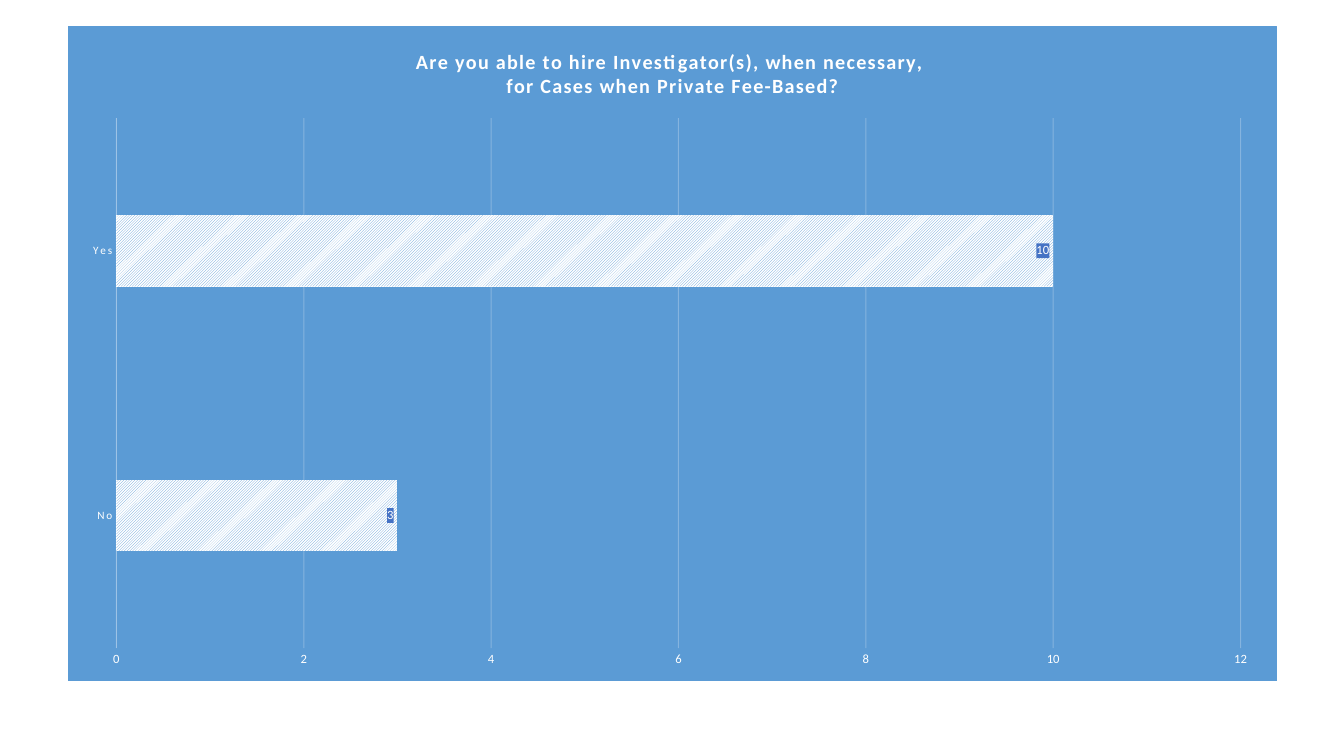
from lxml.etree import fromstring
from pptx import Presentation
from pptx.chart.data import CategoryChartData
from pptx.dml.color import RGBColor
from pptx.enum.chart import XL_CHART_TYPE, XL_LABEL_POSITION, XL_TICK_MARK
from pptx.enum.dml import MSO_PATTERN
from pptx.oxml.ns import nsdecls
from pptx.util import Inches, Pt


def tint(text):
    return RGBColor.from_string(text)


def apply(item, style):
    for key, value in style.items():
        setattr(item, key, value)


class Deck:
    """Draw styled chart parts on the current slide."""

    blue, white, label, edge = "5B9BD5", "FFFFFF", "4472C4", "9DC3E6"
    face = "Calibri"

    def __init__(self, slide):
        self.slide = slide

    def font(self, font, size, bold=False, space=0):
        apply(font, {"name": self.face, "size": Pt(size), "bold": bold})
        font.color.rgb = tint(self.white)
        if space:
            font._rPr.set("spc", str(space))

    def line(self, line, color, width):
        line.color.rgb = tint(color)
        line.width = Pt(width)

    def solid(self, color, line=""):
        return fromstring(
            f'<c:spPr {nsdecls("c", "a")}><a:solidFill><a:srgbClr val="{color}"/>'
            f'</a:solidFill>{line}</c:spPr>')

    def place(self, x, y, wide=None, high=None, inner=False):
        parts = {"xMode": "edge", "yMode": "edge", "x": x, "y": y, "w": wide, "h": high}
        if inner:
            parts = {"layoutTarget": "inner", **parts}
        body = "".join(f'<c:{key} val="{val}"/>' for key, val in parts.items()
                       if val is not None)
        return fromstring(f'<c:layout {nsdecls("c")}><c:manualLayout>{body}'
                          '</c:manualLayout></c:layout>')

    def chart(self, box, names, values):
        data = CategoryChartData()
        data.categories = names
        data.add_series("Series 1", values)
        frame = self.slide.shapes.add_chart(
            XL_CHART_TYPE.BAR_CLUSTERED, *map(Inches, box), data)
        chart = frame.chart
        chart.has_legend = False
        self.font(chart.font, 10)
        line = (f'<a:ln w="9525"><a:solidFill><a:srgbClr val="{self.blue}"/>'
                '</a:solidFill></a:ln>')
        chart.element.find("{*}chart").addnext(self.solid(self.blue, line))
        area = chart.element.find(".//{*}plotArea")
        for old in area.findall("{*}layout"):
            area.remove(old)
        area.insert(0, self.place(0.04, 0.14, 0.93, 0.81, True))
        return chart

    def title(self, chart, lines):
        chart.has_title = True
        frame = chart.chart_title.text_frame
        for row, text in enumerate(lines):
            para = frame.add_paragraph() if row else frame.paragraphs[0]
            run = para.add_run()
            run.text = text
            self.font(run.font, 14.4, True, 100)

    def axes(self, chart):
        cat, val = chart.category_axis, chart.value_axis
        for axis, size, space in ((cat, 8, 120), (val, 9, 0)):
            apply(axis, {"major_tick_mark": XL_TICK_MARK.NONE,
                         "minor_tick_mark": XL_TICK_MARK.NONE})
            self.font(axis.tick_labels.font, size, space=space)
        self.line(cat.format.line, self.edge, 0.25)
        apply(val, {"minimum_scale": 0, "maximum_scale": 12, "major_unit": 2,
                    "has_major_gridlines": True})
        val.format.line.fill.background()
        grid = val.major_gridlines
        self.line(grid.format.line, self.white, 0.75)
        shade = chart.element.find(".//{*}majorGridlines//{*}srgbClr")
        shade.append(fromstring(f'<a:alpha {nsdecls("a")} val="25000"/>'))

    def bars(self, chart):
        plot = chart.plots[0]
        apply(plot, {"gap_width": 269, "overlap": -20, "vary_by_categories": False})
        bar = plot.series[0]
        fill = bar.format.fill
        fill.patterned()
        fill.pattern = MSO_PATTERN.LIGHT_UPWARD_DIAGONAL
        fill.fore_color.rgb = tint(self.blue)
        fill.back_color.rgb = tint(self.white)
        bar.format.line.fill.background()
        marks = bar.data_labels
        apply(marks, {"show_value": True, "position": XL_LABEL_POSITION.INSIDE_END})
        self.font(marks.font, 9)
        text = chart.element.find(".//{*}ser/{*}dLbls/{*}txPr")
        text.addprevious(self.solid(self.label))


def main():
    show = Presentation()
    apply(show, {"slide_width": Inches(13.33), "slide_height": Inches(7.5)})
    deck = Deck(show.slides.add_slide(show.slide_layouts[6]))
    chart = deck.chart((0.67, 0.26, 12, 6.5), ("No", "Yes"), (3, 10))
    deck.title(chart, ("Are you able to hire Investigator(s), when necessary, ",
                       "for Cases when Private Fee-Based?"))
    deck.axes(chart)
    deck.bars(chart)
    show.save("out.pptx")


if __name__ == "__main__":
    main()
